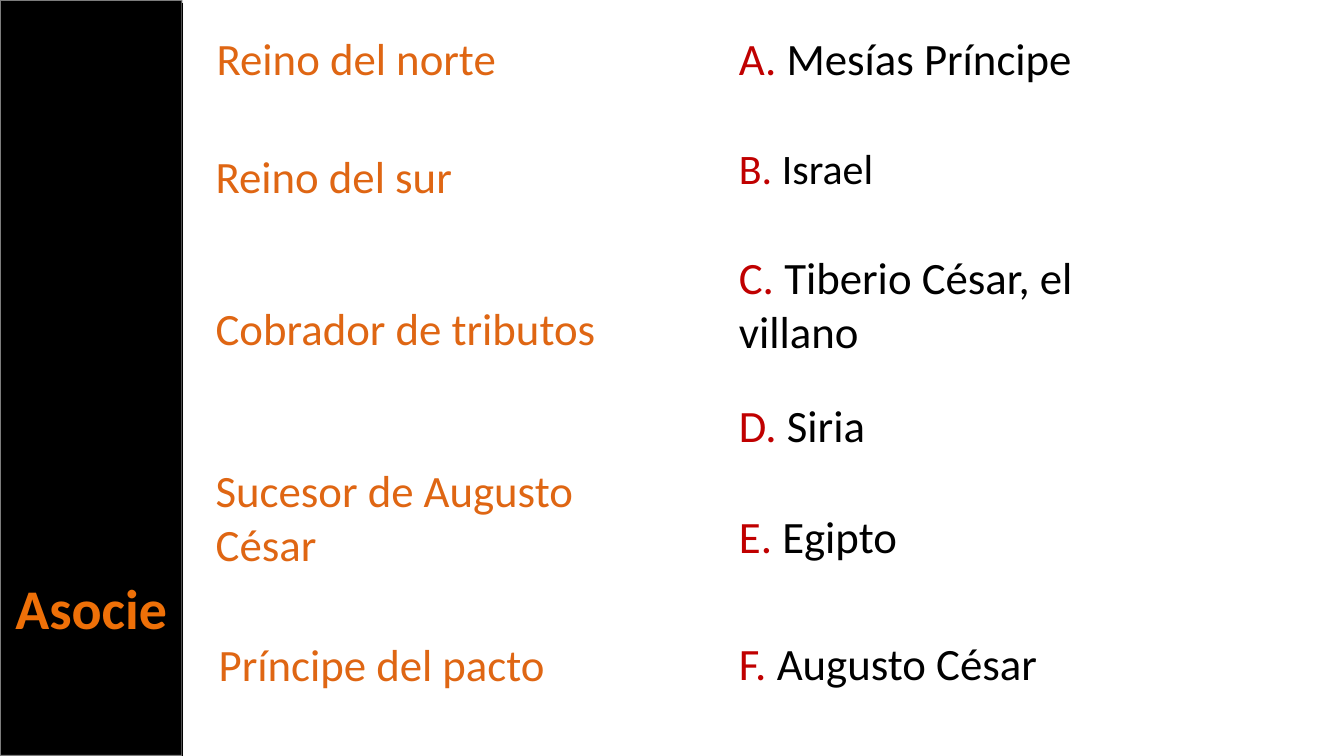
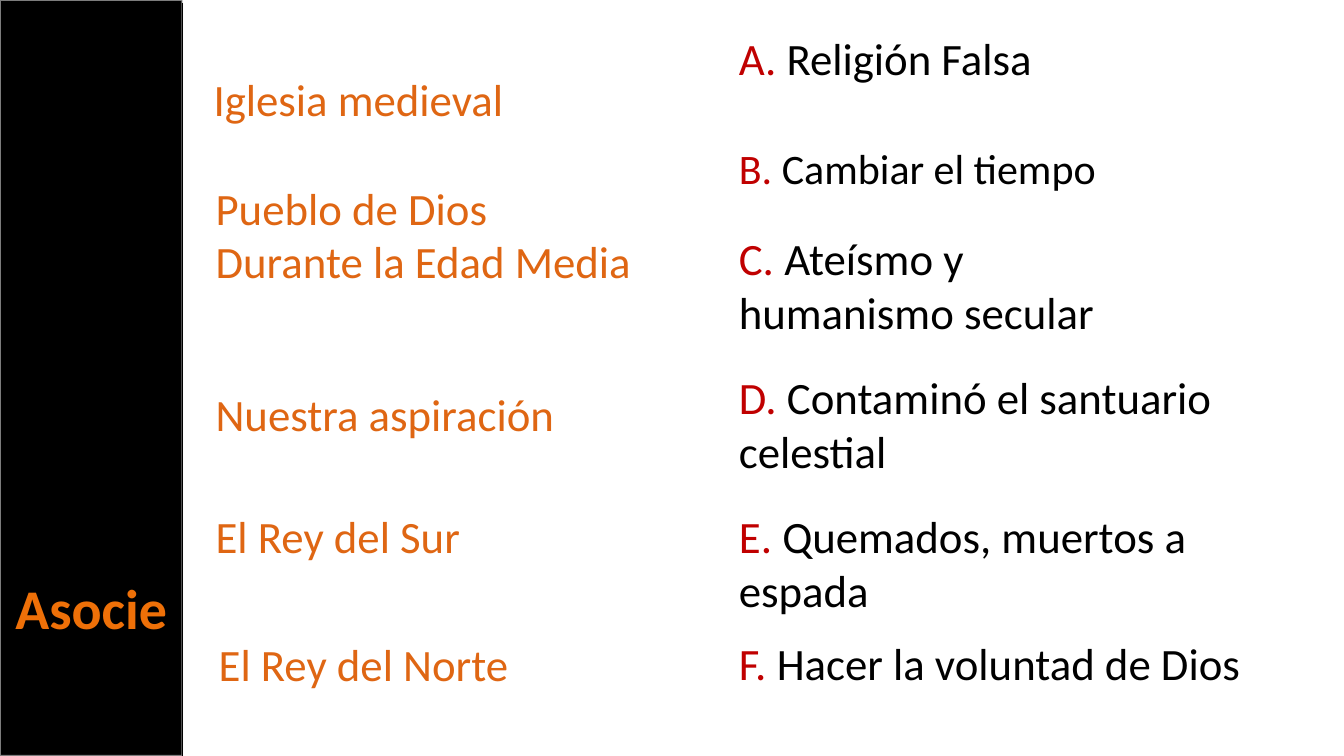
from lxml import etree
from pptx import Presentation
from pptx.dml.color import RGBColor
from pptx.enum.shapes import MSO_CONNECTOR, MSO_SHAPE
from pptx.enum.text import MSO_AUTO_SIZE, PP_ALIGN
from pptx.oxml.ns import qn
from pptx.util import Inches, Pt

RECTANGLE = MSO_SHAPE.RECTANGLE
STRAIGHT = MSO_CONNECTOR.STRAIGHT
GROW = MSO_AUTO_SIZE.SHAPE_TO_FIT_TEXT
LEFT, CENTER = PP_ALIGN.LEFT, PP_ALIGN.CENTER

# Shared look
FONT = "Calibri"
BLACK, BAND_EDGE = "000000", "F9F9F9"
TITLE_COLOR, TERM_COLOR, LETTER_COLOR = "EE7008", "DF6613", "C00000"
BAND_WIDTH, PAGE_HEIGHT = 1.81, 7.5
ANSWER_LEFT = 7.23
ANSWER_WIDTHS = [5.8, 4.18, 4.53, 5, 5.59, 5.59]
ANSWER_SIZES = [32, 30, 32, 32, 32, 32]
ONE_LINE, TWO_LINES = 0.64, 1.18

# Terms: text, left, top, width, height. Answers: text, top, height.
EXERCISES = [
    {
        "terms": [
            ("Reino del norte", 2.05, 0.26, 4.59, ONE_LINE),
            ("Reino del sur", 2.04, 1.43, 3.84, ONE_LINE),
            ("Cobrador de tributos", 2.04, 2.93, 4.13, ONE_LINE),
            ("Sucesor de Augusto César", 2.04, 4.54, 4.39, TWO_LINES),
            ("Príncipe del pacto", 2.07, 6.27, 4.59, ONE_LINE),
        ],
        "answers": [
            ("Mesías Príncipe", 0.26, ONE_LINE),
            ("Israel", 1.36, 0.61),
            ("Tiberio César, el villano", 2.43, TWO_LINES),
            ("Siria", 3.9, ONE_LINE),
            ("Egipto", 5, ONE_LINE),
            ("Augusto César", 6.26, ONE_LINE),
        ],
    },
    {
        "terms": [
            ("Iglesia medieval", 2.02, 0.66, 3.47, ONE_LINE),
            ("Pueblo de Dios Durante la Edad Media", 2.04, 1.74, 4.39, TWO_LINES),
            ("Nuestra aspiración", 2.04, 3.79, 4.13, ONE_LINE),
            ("El Rey del Sur", 2.04, 5, 4.39, ONE_LINE),
            ("El Rey del Norte", 2.07, 6.27, 3.42, ONE_LINE),
        ],
        "answers": [
            ("Religión Falsa", 0.26, ONE_LINE),
            ("Cambiar el tiempo", 1.36, 0.61),
            ("Ateísmo y humanismo secular", 2.24, TWO_LINES),
            ("Contaminó el santuario celestial", 3.62, TWO_LINES),
            ("Quemados, muertos a espada", 5, TWO_LINES),
            ("Hacer la voluntad de Dios", 6.26, ONE_LINE),
        ],
    },
]


def color(hex_text):
    return RGBColor.from_string(hex_text)


def add_text(page, position, spans, size=32, bold=False, align=LEFT):
    box = page.shapes.add_textbox(*map(Inches, position))
    frame = box.text_frame
    frame.word_wrap = True
    frame.auto_size = GROW
    para = frame.paragraphs[0]
    para.alignment = align
    font_format = {"name": FONT, "size": Pt(size), "bold": bold}
    for text, hex_text in spans:
        span = para.add_run()
        span.text = text
        for name, value in font_format.items():
            setattr(span.font, name, value)
        span.font.color.rgb = color(hex_text)


deck = Presentation()
deck.slide_width, deck.slide_height = Inches(13.33), Inches(PAGE_HEIGHT)
blank = deck.slide_layouts[6]

for exercise in EXERCISES:
    page = deck.slides.add_slide(blank)

    # Side band with a half-transparent edge
    band = page.shapes.add_shape(RECTANGLE, 0, 0, Inches(BAND_WIDTH), Inches(PAGE_HEIGHT))
    band.shadow.inherit = False
    band.fill.solid()
    band.fill.fore_color.rgb = color(BLACK)
    band.line.width = Pt(1.35)
    band.line.color.rgb = color(BAND_EDGE)
    edge = band.line._get_or_add_ln().find(".//" + qn("a:srgbClr"))
    etree.SubElement(edge, qn("a:alpha"), val="50000")

    # Terms to match
    for text, *position in exercise["terms"]:
        add_text(page, position, [(text, TERM_COLOR)])

    # Lettered answers
    rows = zip("ABCDEF", exercise["answers"], ANSWER_WIDTHS, ANSWER_SIZES)
    for letter, (text, top, height), width, size in rows:
        spans = [(f"{letter}. ", LETTER_COLOR), (text, BLACK)]
        add_text(page, (ANSWER_LEFT, top, width, height), spans, size)

    # Title on the band
    add_text(page, (0, 5.64, BAND_WIDTH, 0.77), [("Asocie", TITLE_COLOR)], 40, True, CENTER)

    # Rule along the band
    rule = page.shapes.add_connector(
        STRAIGHT, Inches(BAND_WIDTH), Inches(0.03), Inches(BAND_WIDTH), Inches(PAGE_HEIGHT))
    rule.line.width = Pt(0.85)
    rule.line.color.rgb = color(BLACK)
    etree.SubElement(rule._element.spPr, qn("a:effectLst"))

deck.save("out.pptx")
